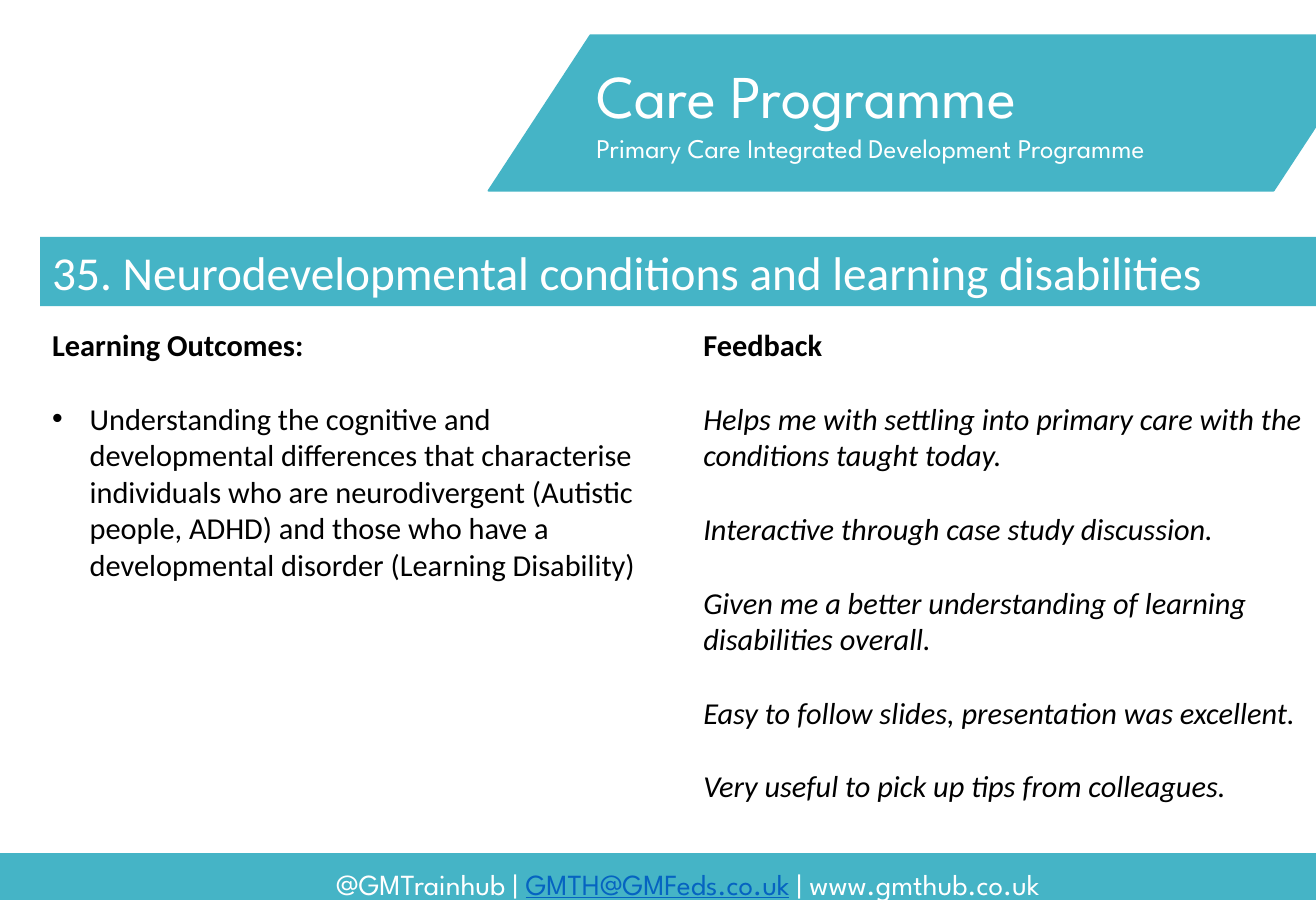
from dataclasses import dataclass

from lxml import etree
from pptx import Presentation
from pptx.dml.color import RGBColor
from pptx.enum.shapes import MSO_SHAPE as Shape
from pptx.enum.text import MSO_ANCHOR as Anchor, MSO_AUTO_SIZE as AutoSize, PP_ALIGN as Align
from pptx.oxml.ns import qn
from pptx.util import Inches, Pt


@dataclass(frozen=True)
class Theme:
    """Colours, fonts and type sizes of the slide."""
    teal: RGBColor = RGBColor(0x45, 0xB4, 0xC6)
    white: RGBColor = RGBColor(255, 255, 255)
    black: RGBColor = RGBColor(0, 0, 0)
    mail: RGBColor = RGBColor(0x05, 0x63, 0xC1)
    brand_font: str = "League Spartan"
    body_font: str = "Calibri"
    programme: float = 36
    heading: float = 28
    body: float = 18
    contact: float = 17.3
    subtitle: float = 16
    gap: float = 22


THEME = Theme()


def add_band(slide, box, kind=Shape.RECTANGLE, fill=THEME.teal, outlined=True):
    """Add a filled shape in the box."""
    band = slide.shapes.add_shape(kind, *map(Inches, box))
    band.shadow.inherit = False
    band.fill.solid()
    band.fill.fore_color.rgb = fill
    if outlined:
        band.line.color.rgb = fill
        band.line.width = Pt(1)
    else:
        band.line.fill.background()
    return band


def add_frame(slide, box):
    """Add a wrapping text box and return its text frame."""
    frame = slide.shapes.add_textbox(*map(Inches, box)).text_frame
    frame.word_wrap = True
    return frame


def write(paragraph, text, size=THEME.body, font=THEME.body_font, color=THEME.black,
          bold=False, italic=False, underline=False, align=Align.LEFT, before=0):
    """Append formatted text to a paragraph."""
    paragraph.alignment = align
    if before:
        paragraph.space_before = Pt(before)
    run = paragraph.add_run()
    run.text = text
    run.font.size, run.font.name = Pt(size), font
    run.font.color.rgb = color
    run.font.bold, run.font.italic, run.font.underline = bold, italic, underline


def add_bullet(paragraph):
    """Give a paragraph a hanging round bullet."""
    properties = paragraph._p.get_or_add_pPr()
    properties.set("marL", str(Inches(0.31)))
    properties.set("indent", str(-Inches(0.31)))
    etree.SubElement(properties, qn("a:buFont")).set("typeface", "Arial")
    etree.SubElement(properties, qn("a:buChar")).set("char", "•")


def build_footer(slide, box):
    """Draw the contact strip."""
    left, top, width, height = box
    add_band(slide, box)
    contact = add_frame(slide, (left, top - 0.09, width, height + 0.13)).paragraphs[0]
    contact.line_spacing = 1.5
    for text, color, underline in (("@GMTrainhub | ", THEME.white, False),
                                   ("GMTH@GMFeds.co.uk", THEME.mail, True),
                                   (" | www.gmthub.co.uk", THEME.white, False)):
        write(contact, text, size=THEME.contact, font=THEME.brand_font, color=color,
              underline=underline, align=Align.CENTER)


def build_banner(slide, box):
    """Draw the slanted programme banner."""
    left, top, width, height = box
    add_band(slide, box, Shape.PARALLELOGRAM).adjustments[0] = 0.655
    frame = add_frame(slide, (left + 0.79, top + 0.14, width - 1.65, height - 0.27))
    write(frame.paragraphs[0], "Care Programme", size=THEME.programme,
          font=THEME.brand_font, color=THEME.white)
    write(frame.add_paragraph(), "Primary Care Integrated Development Programme",
          size=THEME.subtitle, font=THEME.brand_font, color=THEME.white)


def build_title(slide, box, text):
    """Place the session title on its teal bar."""
    title = slide.shapes.title
    title.left, title.top, title.width, title.height = map(Inches, box)
    title.fill.solid()
    title.fill.fore_color.rgb = THEME.teal
    frame = title.text_frame
    frame.auto_size, frame.vertical_anchor = AutoSize.NONE, Anchor.TOP
    write(frame.paragraphs[0], text, size=THEME.heading, color=THEME.white)


def build_column(slide, box, heading, entries, bulleted=False, italic=False):
    """Fill a white panel with a bold heading and spaced entries."""
    frame = add_band(slide, box, fill=THEME.white, outlined=False).text_frame
    frame.word_wrap, frame.vertical_anchor = True, Anchor.TOP
    write(frame.paragraphs[0], heading, bold=True)
    for entry in entries:
        paragraph = frame.add_paragraph()
        if bulleted:
            add_bullet(paragraph)
        write(paragraph, entry, italic=italic, before=THEME.gap)


def main():
    """Build and save the session slide."""
    deck = Presentation()
    deck.slide_width, deck.slide_height = Inches(10.83), Inches(7.5)
    slide = deck.slides.add_slide(deck.slide_layouts[5])
    build_footer(slide, (0, 7.03, 11.32, 0.37))
    build_banner(slide, (4.02, 0.29, 7.3, 1.28))
    build_title(slide, (0.33, 1.95, 10.52, 0.57),
                "35. Neurodevelopmental conditions and learning disabilities")
    build_column(slide, (0.33, 2.64, 5.16, 4.34), "Learning Outcomes:", [
        "Understanding the cognitive and developmental differences that characterise "
        "individuals who are neurodivergent (Autistic people, ADHD) and those who have "
        "a developmental disorder (Learning Disability)",
    ], bulleted=True)
    build_column(slide, (5.69, 2.64, 5.16, 4.34), "Feedback", [
        "Helps me with settling into primary care with the conditions taught today.",
        "Interactive through case study discussion.",
        "Given me a better understanding of learning disabilities overall.",
        "Easy to follow slides, presentation was excellent.",
        "Very useful to pick up tips from colleagues.",
    ], italic=True)
    deck.save("out.pptx")


if __name__ == "__main__":
    main()
